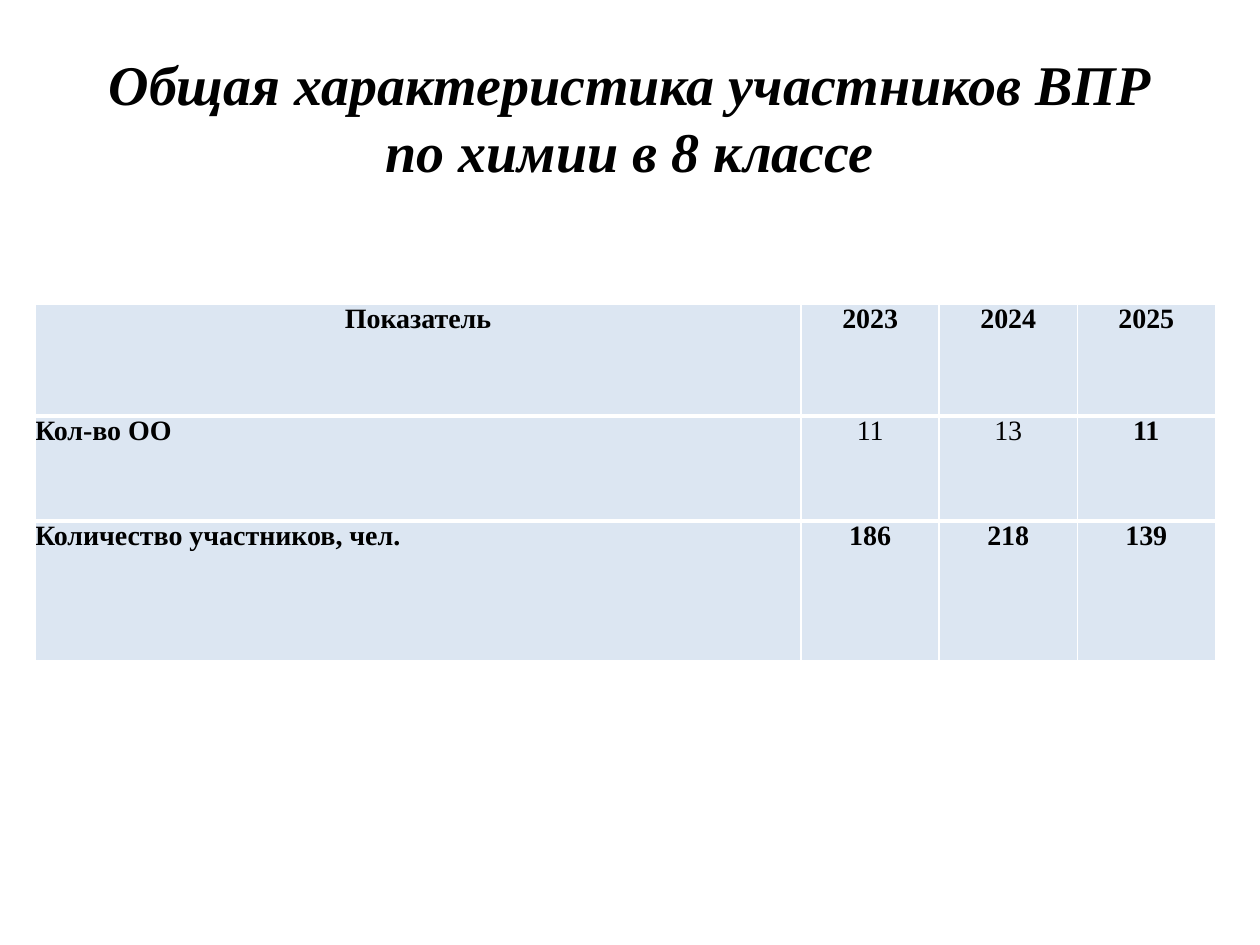
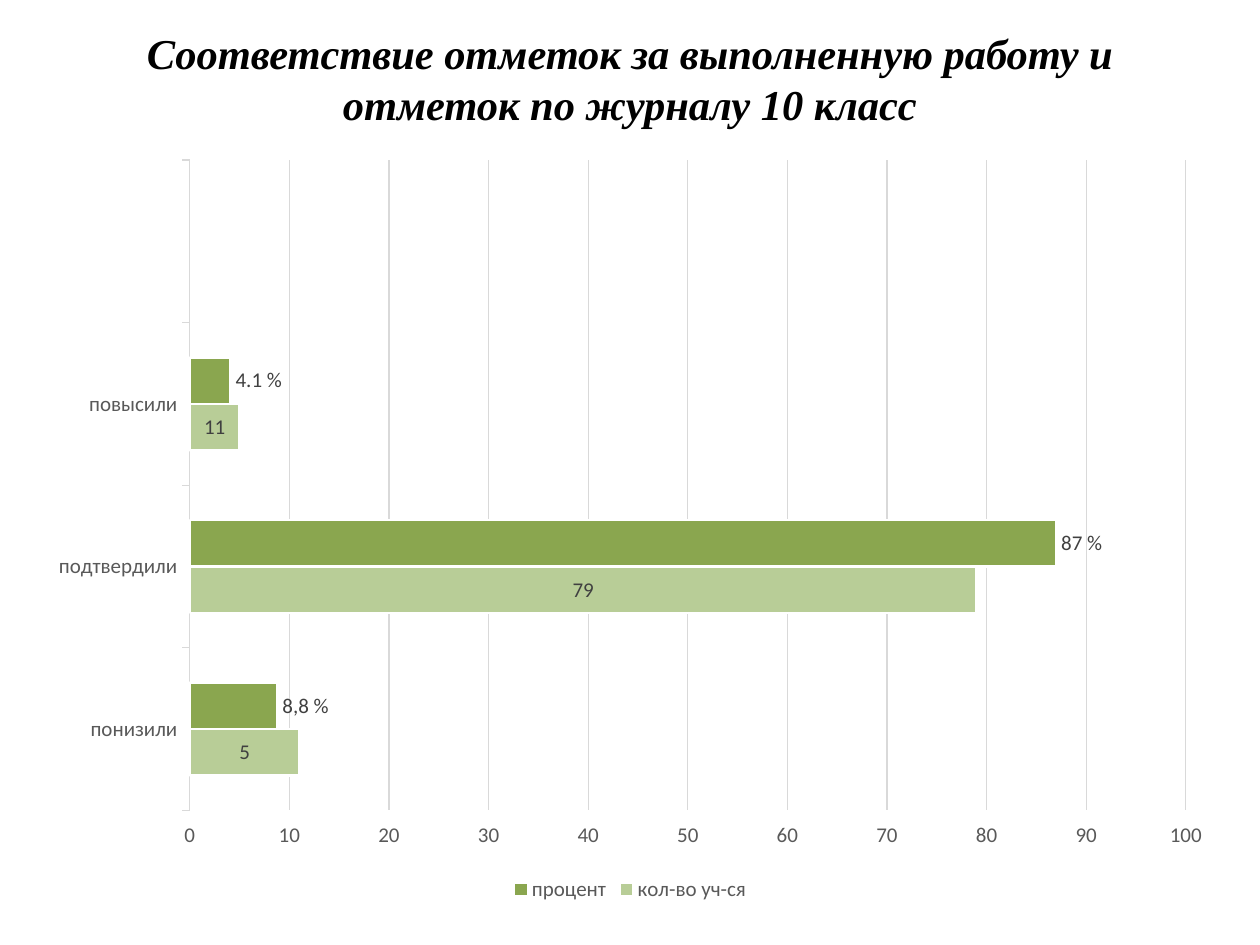
from dataclasses import dataclass

import lxml.etree
import pptx
import pptx.chart.data
import pptx.dml.color
import pptx.enum.chart
import pptx.enum.text
import pptx.oxml.ns
import pptx.util

Pt = pptx.util.Pt

COLOURS: dict[str, str] = {
    "black": "000000",
    "white": "FFFFFF",
    "cell": "DCE6F2",
    "grid": "D9D9D9",
    "axis text": "595959",
    "label text": "404040",
    "light green": "B8CD97",
    "green": "8AA64F",
}
SERIF = "Times New Roman"
SANS = "Calibri"
THIN, THICK = 1, 3


@dataclass(frozen=True)
class Title:
    text: str
    size: float
    top: float
    height: float
    anchor: pptx.enum.text.MSO_ANCHOR


@dataclass(frozen=True)
class TableRow:
    height: float
    values: tuple[str, ...]
    plain_columns: tuple[int, ...] = ()


@dataclass(frozen=True)
class BarSeries:
    name: str
    values: tuple[float | None, ...]
    colour: str
    position: pptx.enum.chart.XL_LABEL_POSITION
    point_labels: dict[int, str]


PARTICIPANTS_TITLE = Title(
    "Общая характеристика участников ВПР по химии в 8 классе",
    32, 21.6, 90, pptx.enum.text.MSO_ANCHOR.MIDDLE,
)
MARKS_TITLE = Title(
    "Соответствие отметок за выполненную работу и отметок по журналу 10 класс",
    24.3, 15.5, 96, pptx.enum.text.MSO_ANCHOR.TOP,
)
COLUMN_WIDTHS = (437.8, 78.9, 78.9, 78.9)
PARTICIPANT_ROWS = (
    TableRow(64, ("Показатель", "2023", "2024", "2025")),
    TableRow(60, ("Кол-во ОО", "11", "13", "11"), plain_columns=(1, 2)),
    TableRow(80, ("Количество участников, чел.", "186", "218", "139")),
)
MARK_CHANGES = ("понизили", "подтвердили", "повысили", "")
MARK_SERIES = (
    BarSeries(
        "кол-во уч-ся", (11, 79, 5, None), "light green",
        pptx.enum.chart.XL_LABEL_POSITION.CENTER, {0: "5", 2: "11"},
    ),
    BarSeries(
        "процент", (8.8, 87, 4.1, None), "green",
        pptx.enum.chart.XL_LABEL_POSITION.OUTSIDE_END,
        {0: "8,8 %", 1: "87 %", 2: "4.1 %"},
    ),
)


def rgb(name: str) -> pptx.dml.color.RGBColor:
    return pptx.dml.color.RGBColor.from_string(COLOURS[name])


def set_font(font, face: str, size: float, colour: str,
             bold: bool = False, italic: bool = False) -> None:
    font.name = face
    font.size = Pt(size)
    font.bold = bold
    font.italic = italic
    font.color.rgb = rgb(colour)


def set_line(line, colour: str, width: float) -> None:
    line.color.rgb = rgb(colour)
    line.width = Pt(width)


def add_title(page, title: Title) -> None:
    box = page.shapes.add_textbox(Pt(36), Pt(title.top), Pt(648), Pt(title.height))
    frame = box.text_frame
    frame.word_wrap = True
    frame.vertical_anchor = title.anchor
    frame.margin_top = frame.margin_bottom = 0
    para = frame.paragraphs[0]
    para.text = title.text
    para.alignment = pptx.enum.text.PP_ALIGN.CENTER
    set_font(para.font, SERIF, title.size, "black", bold=True, italic=True)


def set_borders(cell, top: float, bottom: float) -> None:
    qn = pptx.oxml.ns.qn
    properties = cell._tc.get_or_add_tcPr()
    widths = {"a:lnL": THIN, "a:lnR": THIN, "a:lnT": top, "a:lnB": bottom}
    for index, (tag, width) in enumerate(widths.items()):
        border = lxml.etree.Element(qn(tag), w=str(Pt(width)))
        fill = lxml.etree.SubElement(border, qn("a:solidFill"))
        lxml.etree.SubElement(fill, qn("a:srgbClr"), val=COLOURS["white"])
        properties.insert(index, border)


def add_participants_table(page) -> None:
    last = len(PARTICIPANT_ROWS) - 1
    table = page.shapes.add_table(
        len(PARTICIPANT_ROWS), len(COLUMN_WIDTHS), Pt(20), Pt(173.7),
        Pt(sum(COLUMN_WIDTHS)), Pt(sum(row.height for row in PARTICIPANT_ROWS)),
    ).table
    table.first_row = table.horz_banding = False
    for column, width in zip(table.columns, COLUMN_WIDTHS):
        column.width = Pt(width)
    for row_index, row in enumerate(PARTICIPANT_ROWS):
        table.rows[row_index].height = Pt(row.height)
        for column_index, value in enumerate(row.values):
            cell = table.cell(row_index, column_index)
            cell.fill.solid()
            cell.fill.fore_color.rgb = rgb("cell")
            cell.margin_left = cell.margin_right = 0
            cell.margin_top = cell.margin_bottom = 0
            set_borders(cell, THICK if row_index else THIN,
                        THICK if row_index < last else THIN)
            para = cell.text_frame.paragraphs[0]
            para.text = value
            if row_index == 0 or column_index > 0:
                para.alignment = pptx.enum.text.PP_ALIGN.CENTER
            set_font(para.font, SERIF, 16, "black",
                     bold=column_index not in row.plain_columns)


def style_series(plot_series, series: BarSeries) -> None:
    plot_series.format.fill.solid()
    plot_series.format.fill.fore_color.rgb = rgb(series.colour)
    set_line(plot_series.format.line, "white", 1.5)
    plot_series.invert_if_negative = False
    labels = plot_series.data_labels
    labels.show_value = True
    labels.position = series.position
    set_font(labels.font, SANS, 12, "label text")
    for index, text in series.point_labels.items():
        label = plot_series.points[index].data_label
        para = label.text_frame.paragraphs[0]
        span = para.add_run()
        span.text = text
        set_font(span.font, SANS, 12, "label text")
        label.position = series.position


def add_marks_chart(page) -> None:
    data = pptx.chart.data.CategoryChartData()
    data.categories = MARK_CHANGES
    for series in MARK_SERIES:
        data.add_series(series.name, series.values)
    chart = page.shapes.add_chart(
        pptx.enum.chart.XL_CHART_TYPE.BAR_CLUSTERED,
        Pt(20), Pt(82.8), Pt(680.4), Pt(435.6), data,
    ).chart
    set_font(chart.font, SANS, 10, "black")
    chart.has_title = False
    chart.has_legend = True
    chart.legend.position = pptx.enum.chart.XL_LEGEND_POSITION.BOTTOM
    chart.legend.include_in_layout = False
    set_font(chart.legend.font, SANS, 12, "axis text")

    for axis in (chart.category_axis, chart.value_axis):
        axis.major_tick_mark = pptx.enum.chart.XL_TICK_MARK.OUTSIDE
        axis.minor_tick_mark = pptx.enum.chart.XL_TICK_MARK.NONE
        set_font(axis.tick_labels.font, SANS, 12, "axis text")
    set_line(chart.category_axis.format.line, "grid", 0.75)
    values = chart.value_axis
    values.minimum_scale, values.maximum_scale, values.major_unit = 0, 100, 10
    values.format.line.fill.background()
    values.has_major_gridlines = True
    set_line(values.major_gridlines.format.line, "grid", 0.75)

    plot = chart.plots[0]
    plot.gap_width = 150
    plot.overlap = 0
    plot.vary_by_categories = False
    for plot_series, series in zip(plot.series, MARK_SERIES):
        style_series(plot_series, series)


def main() -> None:
    deck = pptx.Presentation()
    deck.slide_width, deck.slide_height = Pt(720), Pt(540)
    contents = (
        (PARTICIPANTS_TITLE, add_participants_table),
        (MARKS_TITLE, add_marks_chart),
    )
    for title, add_content in contents:
        page = deck.slides.add_slide(deck.slide_layouts[6])
        add_title(page, title)
        add_content(page)
    deck.save("out.pptx")


if __name__ == "__main__":
    main()
